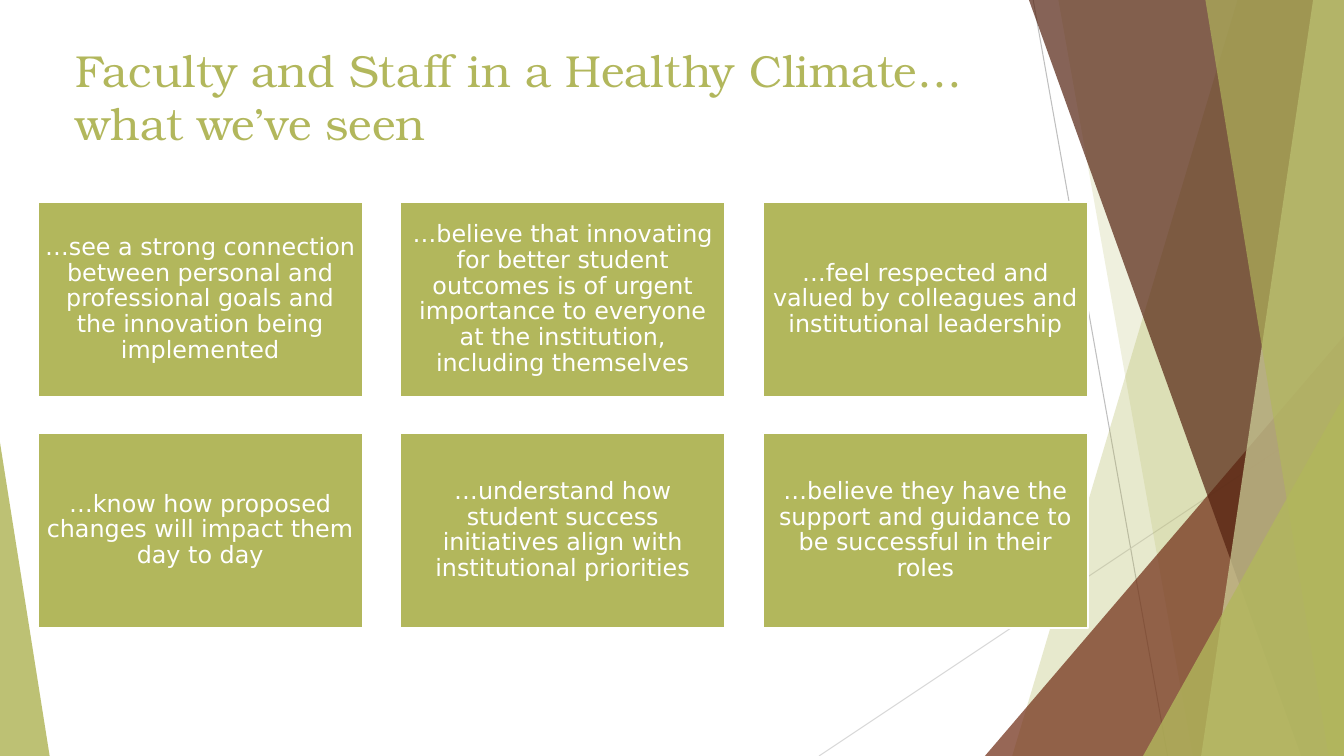
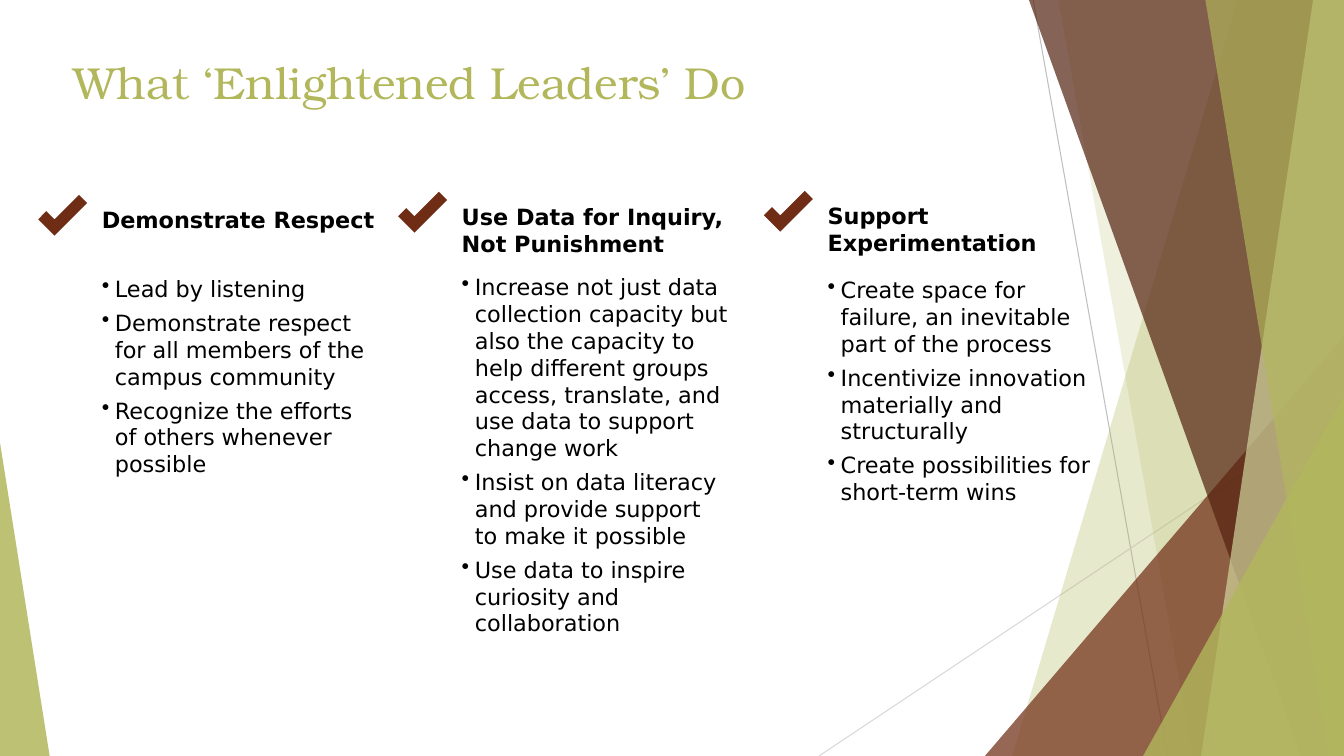
from lxml import etree
from pptx import Presentation
from pptx.dml.color import RGBColor
from pptx.enum import shapes, text
from pptx.oxml.ns import qn
from pptx.util import Pt

COLORS = {
    "olive": "B2B75C",
    "pale_olive": "D1D49D",
    "rust": "702D16",
    "brown": "542210",
    "gray": "BFBFBF",
    "light_gray": "D9D9D9",
    "white": "FFFFFF",
    "black": "000000",
}
TITLE_FONT, BODY_FONT = "TeX Gyre Bonum", "DejaVu Sans"
WIDTH, HEIGHT = 960, 540


def rgb(name):
    return RGBColor.from_string(COLORS[name])


class Deck:
    """Holds the presentation, its style and the current slide."""

    def __init__(self):
        self.prs = Presentation()
        self.prs.slide_width, self.prs.slide_height = Pt(WIDTH), Pt(HEIGHT)
        self.layout = self.prs.slide_layouts[5]
        for ph in list(self.layout.placeholders):
            if ph.placeholder_format.idx:
                ph.element.getparent().remove(ph.element)
        self.s = None

    def new_slide(self, title, x, y, w, h):
        self.s = self.prs.slides.add_slide(self.layout)
        sp = self.s.shapes.title
        sp.left, sp.top, sp.width, sp.height = Pt(x), Pt(y), Pt(w), Pt(h)
        tf = sp.text_frame
        tf.text = title
        tf.word_wrap = True
        tf.auto_size = text.MSO_AUTO_SIZE.NONE
        tf.vertical_anchor = text.MSO_ANCHOR.TOP
        self.format_text(tf, 32, "olive", font=TITLE_FONT)

    def format_text(self, tf, size, color, font=BODY_FONT, bold=False,
                    align=text.PP_ALIGN.LEFT):
        for p in tf.paragraphs:
            p.alignment = align
            for r in p.runs:
                r.font.name, r.font.size, r.font.bold = font, Pt(size), bold
                r.font.color.rgb = rgb(color)

    def paint(self, sp, color, opacity=100):
        """Give a flat fill without line or shadow."""
        sp.shadow.inherit = False
        sp.fill.solid()
        sp.fill.fore_color.rgb = rgb(color)
        sp.line.fill.background()
        if opacity < 100:
            clr = sp.element.spPr.find(".//" + qn("a:srgbClr"))
            etree.SubElement(clr, qn("a:alpha"), val=str(opacity * 1000))
        return sp

    def shape(self, kind, x, y, w, h, color, opacity=100):
        sp = self.s.shapes.add_shape(kind, Pt(x), Pt(y), Pt(w), Pt(h))
        return self.paint(sp, color, opacity)

    def triangle(self, x, y, w, apex, color, opacity):
        """Triangle standing on the slide's bottom edge."""
        sp = self.shape(shapes.MSO_SHAPE.ISOSCELES_TRIANGLE, x, y, w,
                        HEIGHT - y, color, opacity)
        sp.adjustments[0] = apex

    def band(self, top_x, bottom_x, color, opacity):
        """Full-height band from a slanted left side to the right edge."""
        fb = self.s.shapes.build_freeform(Pt(top_x), 0)
        corners = [(WIDTH, 0), (WIDTH, HEIGHT), (bottom_x, HEIGHT)]
        fb.add_line_segments([(Pt(x), Pt(y)) for x, y in corners])
        self.paint(fb.convert_to_shape(), color, opacity)

    def line(self, x1, y1, x2, y2, color):
        cn = self.s.shapes.add_connector(
            shapes.MSO_CONNECTOR.STRAIGHT, Pt(x1), Pt(y1), Pt(x2), Pt(y2))
        cn.line.color.rgb = rgb(color)
        cn.line.width = Pt(0.75)
        etree.SubElement(cn.element.spPr, qn("a:effectLst"))

    def backdrop(self):
        """Draw the shared decoration and move it to the layout."""
        self.line(738, 0, 834, HEIGHT, "gray")
        self.line(WIDTH, 290, 585, HEIGHT, "light_gray")
        self.band(884, 723, "olive", 30)
        self.band(756, 852, "olive", 20)
        self.triangle(703.5, 240, 256.5, 1, "rust", 72)
        self.band(735, 929.5, "brown", 70)
        self.band(938, 858, "pale_olive", 70)
        self.band(861, 949, "olive", 65)
        self.triangle(816.5, 283, 143.5, 1, "olive", 80)
        self.triangle(0, 316, 35.5, 0, "olive", 85)
        for sp in list(self.s.shapes):
            if not sp.is_placeholder:
                self.layout.shapes.element.append(sp.element)

    def card(self, x, y, w, h, words):
        sp = self.shape(shapes.MSO_SHAPE.RECTANGLE, x, y, w, h, "olive")
        sp.line.color.rgb = rgb("white")
        sp.line.width = Pt(1.5)
        tf = sp.text_frame
        tf.text = words
        tf.word_wrap = True
        tf.vertical_anchor = text.MSO_ANCHOR.MIDDLE
        tf.margin_left = tf.margin_right = Pt(5)
        tf.margin_top = tf.margin_bottom = Pt(5)
        tf.paragraphs[0].line_spacing = 0.9
        self.format_text(tf, 17, "white", align=text.PP_ALIGN.CENTER)

    def text_box(self, x, y, w, h, words, bold=False):
        tf = self.s.shapes.add_textbox(Pt(x), Pt(y), Pt(w), Pt(h)).text_frame
        tf.text = words
        tf.word_wrap = True
        tf.auto_size = text.MSO_AUTO_SIZE.SHAPE_TO_FIT_TEXT
        tf.margin_left = tf.margin_right = tf.margin_top = tf.margin_bottom = 0
        self.format_text(tf, 16, "black", bold=bold)
        return tf

    def bullets(self, x, y, w, h, items):
        for p in self.text_box(x, y, w, h, "\n".join(items)).paragraphs:
            p.space_before = Pt(5)
            pPr = p._p.get_or_add_pPr()
            pPr.set("marL", str(Pt(9.4)))
            pPr.set("indent", str(-Pt(9.4)))
            etree.SubElement(pPr, qn("a:buChar"), char="•")

    def check_mark(self, x, y):
        sp = self.shape(shapes.MSO_SHAPE.CORNER, x, y, 33, 16.5, "rust")
        sp.rotation = 315


CARDS = [
    "…see a strong connection between personal and professional goals and "
    "the innovation being implemented",
    "…believe that innovating for better student outcomes is of urgent "
    "importance to everyone at the institution, including themselves",
    "…feel respected and valued by colleagues and institutional leadership",
    "…know how proposed changes will impact them day to day",
    "…understand how student success initiatives align with institutional "
    "priorities",
    "…believe they have the support and guidance to be successful in their "
    "roles",
]

# x, heading top, heading height, list top, list height, heading, items
PRACTICES = [
    (72.7, 147.6, 19.4, 196.6, 146, "Demonstrate Respect", [
        "Lead by listening",
        "Demonstrate respect for all members of the campus community",
        "Recognize the efforts of others whenever possible"]),
    (329.8, 145.4, 38.8, 195.1, 262, "Use Data for Inquiry, Not Punishment", [
        "Increase not just data collection capacity but also the capacity to "
        "help different groups access, translate, and use data to support "
        "change work",
        "Insist on data literacy and provide support to make it possible",
        "Use data to inspire curiosity and collaboration"]),
    (591.1, 144.7, 38.8, 197.3, 165, "Support Experimentation", [
        "Create space for failure, an inevitable part of the process",
        "Incentivize innovation materially and structurally",
        "Create possibilities for short-term wins"]),
]


def main():
    deck = Deck()

    deck.new_slide("Faculty and Staff in a Healthy Climate…\vwhat we’ve seen",
                   46.8, 26.6, 720, 90)
    deck.backdrop()
    for i, words in enumerate(CARDS):
        row, col = divmod(i, 3)
        deck.card(26.8 + 259 * col, 144 + 165 * row, 232.5, 139.5, words)

    deck.new_slide("What ‘Enlightened Leaders’ Do", 45.4, 35.3, 720, 72)
    for x, y, h, list_y, list_h, heading, items in PRACTICES:
        deck.text_box(x, y, 204, h, heading, bold=True)
        deck.check_mark(x - 44.4, y - 5)
        deck.bullets(x, list_y, 190.8, list_h, items)

    deck.prs.save("out.pptx")


if __name__ == "__main__":
    main()
